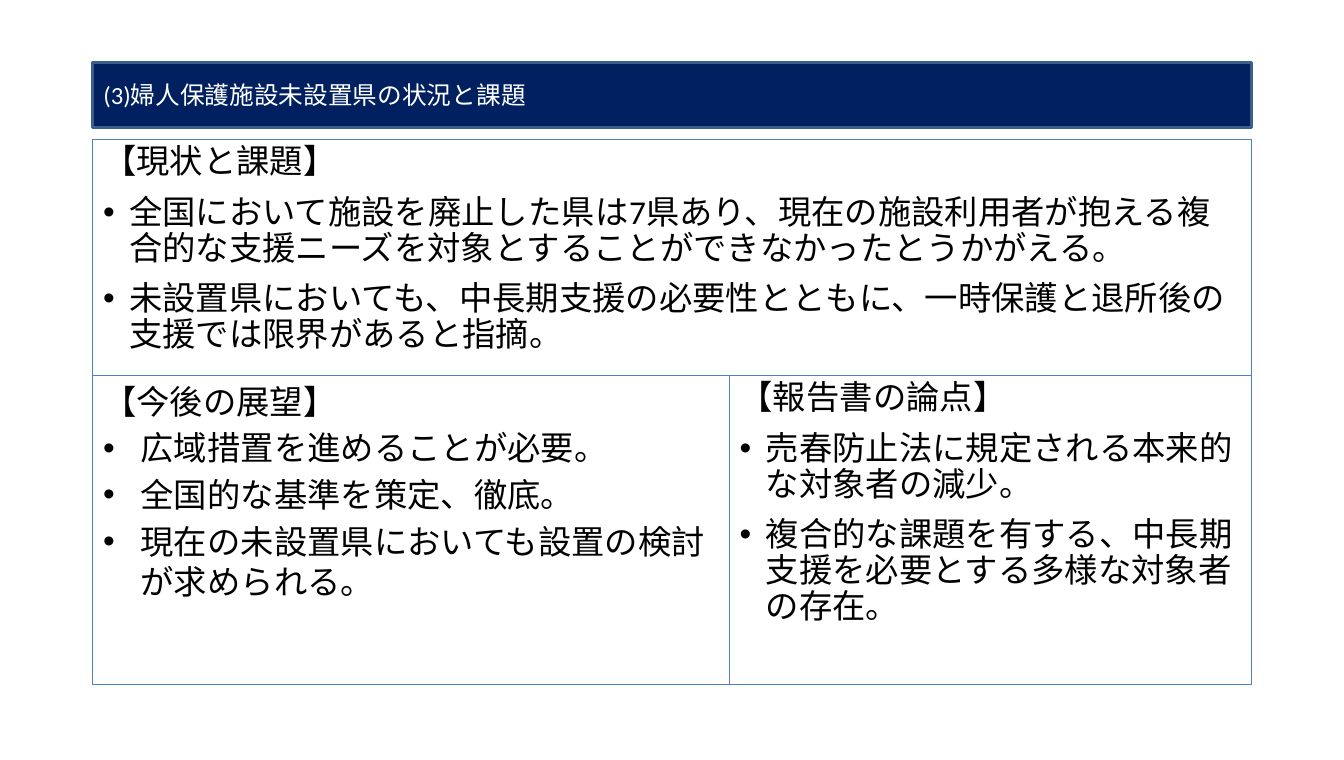
from lxml import etree
from pptx import Presentation
from pptx.dml.color import RGBColor
from pptx.enum.shapes import MSO_SHAPE
from pptx.enum.text import MSO_ANCHOR, MSO_AUTO_SIZE, PP_ALIGN
from pptx.oxml.ns import qn
from pptx.util import Inches, Pt

NAVY = RGBColor(0x00, 0x20, 0x60)
BAR_EDGE = RGBColor(0x3A, 0x5F, 0x8C)
PANEL_EDGE = RGBColor(0x4F, 0x81, 0xBD)
BLACK = RGBColor(0, 0, 0)
WHITE = RGBColor(0xFF, 0xFF, 0xFF)
FONT = "Calibri"
RECTANGLE = MSO_SHAPE.RECTANGLE
TOP, MIDDLE = MSO_ANCHOR.TOP, MSO_ANCHOR.MIDDLE
LEFT_ALIGN = PP_ALIGN.LEFT
NO_AUTOFIT = MSO_AUTO_SIZE.NONE

LEFT, FULL_WIDTH = 0.89, 11.1
OUTLOOK_WIDTH = 6.1
STATUS_TOP, STATUS_HEIGHT = 1.34, 2.26
LOWER_TOP, LOWER_HEIGHT = STATUS_TOP + STATUS_HEIGHT, 2.96

# left, top, width, height, bullet indent, line spacing, space before, heading, bullets
PANELS = [
    (LEFT, LOWER_TOP, OUTLOOK_WIDTH, LOWER_HEIGHT, 0.36, 1.0, 4.6, "【今後の展望】", [
        "広域措置を進めることが必要。",
        "全国的な基準を策定、徹底。",
        "現在の未設置県においても設置の検討が求められる。",
    ]),
    (LEFT + OUTLOOK_WIDTH, LOWER_TOP, FULL_WIDTH - OUTLOOK_WIDTH, LOWER_HEIGHT,
     0.25, 0.9, 10, "【報告書の論点】", [
        "売春防止法に規定される本来的な対象者の減少。",
        "複合的な課題を有する、中長期支援を必要とする多様な対象者の存在。",
    ]),
    (LEFT, STATUS_TOP, FULL_WIDTH, STATUS_HEIGHT, 0.25, 0.9, 10, "【現状と課題】", [
        "全国において施設を廃止した県は7県あり、現在の施設利用者が抱える"
        "複合的な支援ニーズを対象とすることができなかったとうかがえる。",
        "未設置県においても、中長期支援の必要性とともに、"
        "一時保護と退所後の支援では限界があると指摘。",
    ]),
]


def style_runs(paragraph, size, color):
    paragraph.alignment = LEFT_ALIGN
    for run in paragraph.runs:
        run.font.name = FONT
        run.font.size = Pt(size)
        run.font.color.rgb = color


def add_bullet(paragraph, indent):
    """Give the paragraph a round bullet with a hanging indent in inches."""
    properties = paragraph._p.get_or_add_pPr()
    properties.set("marL", str(Inches(indent)))
    properties.set("indent", str(-Inches(indent)))
    etree.SubElement(properties, qn("a:buFont")).set("typeface", "Arial")
    etree.SubElement(properties, qn("a:buChar")).set("char", "•")


prs = Presentation()
prs.slide_width = Inches(12.88)
prs.slide_height = Inches(7.28)
slide = prs.slides.add_slide(prs.slide_layouts[5])

# Title bar: the title placeholder with rounded corners
title = slide.shapes.title
title.left, title.top = Inches(LEFT), Inches(0.6)
title.width, title.height = Inches(FULL_WIDTH), Inches(0.62)
geometry = etree.SubElement(title._element.spPr, qn("a:prstGeom"))
geometry.set("prst", "roundRect")
etree.SubElement(geometry, qn("a:avLst"))
title.fill.solid()
title.fill.fore_color.rgb = NAVY
title.line.color.rgb = BAR_EDGE
title.line.width = Pt(2)
title.text_frame.text = "(3)婦人保護施設未設置県の状況と課題"
title.text_frame.auto_size = NO_AUTOFIT
title.text_frame.vertical_anchor = MIDDLE
style_runs(title.text_frame.paragraphs[0], 17, WHITE)

# Three bordered panels
for left, top, width, height, indent, spacing, before, heading, bullets in PANELS:
    panel = slide.shapes.add_shape(
        RECTANGLE, Inches(left), Inches(top), Inches(width), Inches(height))
    panel.shadow.inherit = False
    panel.fill.background()
    panel.line.color.rgb = PANEL_EDGE
    panel.line.width = Pt(0.75)
    frame = panel.text_frame
    frame.word_wrap = True
    frame.vertical_anchor = TOP
    frame.text = "\n".join([heading, *bullets])
    for number, paragraph in enumerate(frame.paragraphs):
        paragraph.line_spacing = spacing
        paragraph.space_before = Pt(before)
        style_runs(paragraph, 23, BLACK)
        if number > 0:
            add_bullet(paragraph, indent)

prs.save("out.pptx")
